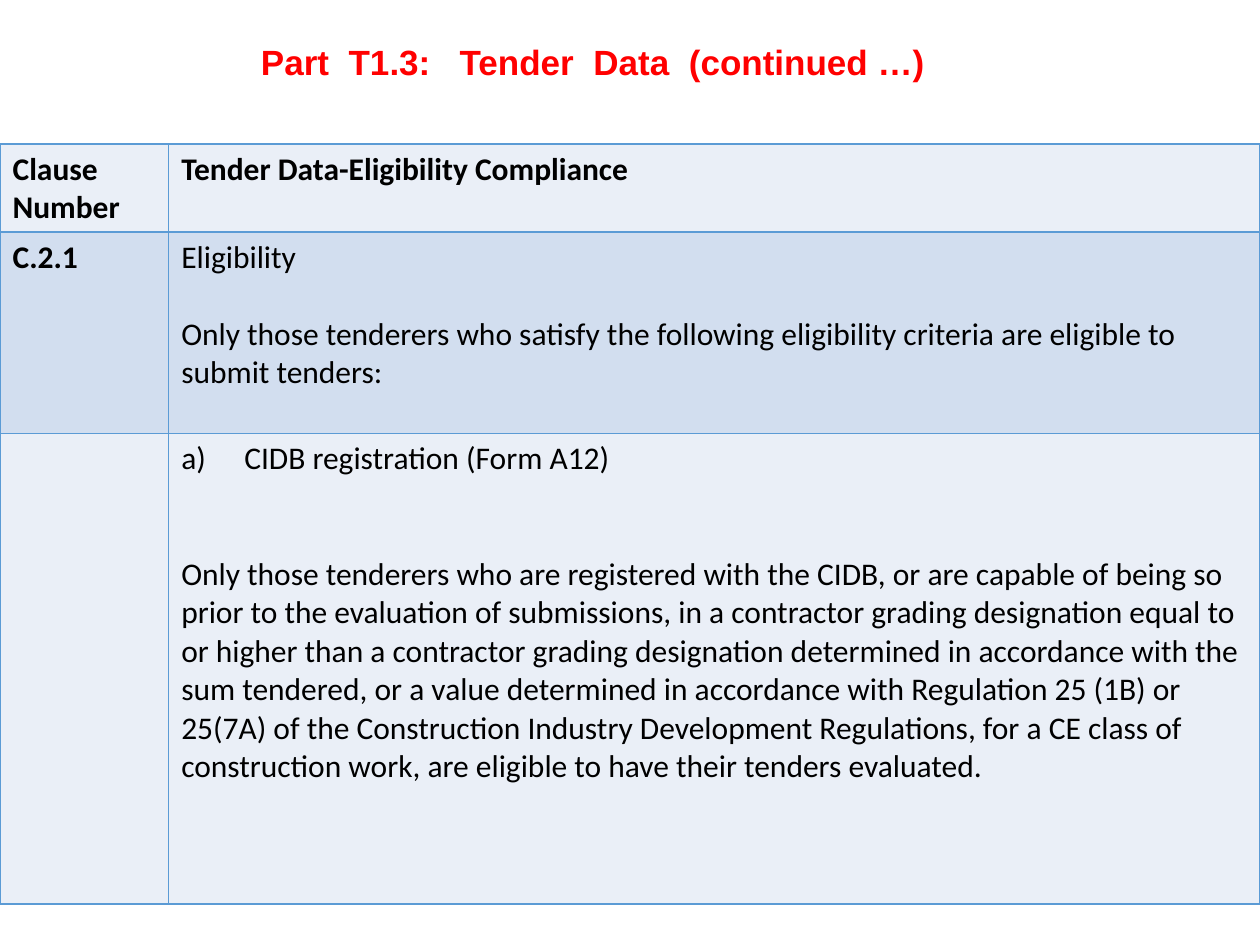
"""Build the tender data slide with its eligibility table."""
from dataclasses import dataclass

import pptx
import pptx.dml.color
import pptx.enum.text
import pptx.oxml
import pptx.oxml.ns
import pptx.util
from pptx.util import Cm, Pt

RED = pptx.dml.color.RGBColor(0xFF, 0x00, 0x00)
BLACK = pptx.dml.color.RGBColor(0x00, 0x00, 0x00)
BORDER = pptx.dml.color.RGBColor(0x5B, 0x9B, 0xD5)
PALE = pptx.dml.color.RGBColor(0xEA, 0xEF, 0xF7)
BAND = pptx.dml.color.RGBColor(0xD2, 0xDE, 0xEF)

TITLE_SIZE = 20
SPACE_WIDTH = 556
LINE_HEIGHT = 22


@dataclass
class Line:
    text: str
    bold: bool = False
    lines_before: int = 0


@dataclass
class Row:
    height: float
    fill: pptx.dml.color.RGBColor
    clause: list[Line]
    data: list[Line]


@dataclass
class Word:
    text: str
    extra_spaces: int = 0


TITLE = [
    Word("Part", 1), Word("T1.3:", 2), Word("Tender", 1),
    Word("Data", 1), Word("(continued …)"),
]
COLUMN_WIDTHS = [3.4, 22]
ROWS = [
    Row(1.78, PALE, [Line("Clause", True), Line("Number", True)],
        [Line("Tender Data-Eligibility Compliance", True)]),
    Row(4.06, BAND, [Line("C.2.1", True)], [
        Line("Eligibility"),
        Line("Only those tenderers who satisfy the following eligibility criteria "
             "are eligible to submit tenders:", lines_before=1),
    ]),
    Row(9.48, PALE, [], [
        Line("a)\tCIDB registration (Form A12)"),
        Line("Only those tenderers who are registered with the CIDB, or are capable "
             "of being so prior to the evaluation of submissions, in a contractor "
             "grading designation equal to or higher than a contractor grading "
             "designation determined in accordance with the sum tendered, or a value "
             "determined in accordance with Regulation 25 (1B) or 25(7A) of the "
             "Construction Industry Development Regulations, for a CE class of "
             "construction work, are eligible to have their tenders evaluated.",
             lines_before=2),
    ]),
]


def add_span(para, text: str, font: str, size: float, color, bold: bool):
    """Add one formatted run to a paragraph."""
    span = para.add_run()
    span.text = text
    span.font.name = font
    span.font.size = Pt(size)
    span.font.bold = bold
    span.font.color.rgb = color
    return span


def write_title(box, words: list[Word]) -> None:
    """Place the title and widen the spaces between its words."""
    box.left, box.top, box.width, box.height = Cm(4.9), Cm(0.69), Cm(14.1), Cm(1.12)
    frame = box.text_frame
    frame.word_wrap = False
    frame.auto_size = pptx.enum.text.MSO_AUTO_SIZE.SHAPE_TO_FIT_TEXT
    frame.vertical_anchor = pptx.enum.text.MSO_ANCHOR.TOP
    para = frame.paragraphs[0]
    para.alignment = pptx.enum.text.PP_ALIGN.CENTER
    for word in words:
        add_span(para, word.text, "Arial", TITLE_SIZE, RED, True)
        if word.extra_spaces:
            gap = add_span(para, " ", "Arial", TITLE_SIZE, RED, True)
            gap.font._element.set("spc", str(word.extra_spaces * SPACE_WIDTH))


def add_borders(cell) -> None:
    """Draw a thin line on all four sides of a cell."""
    properties = cell._tc.get_or_add_tcPr()
    for side in ("lnL", "lnR", "lnT", "lnB"):
        properties.append(pptx.oxml.parse_xml(
            f'<a:{side} {pptx.oxml.ns.nsdecls("a")} w="{Pt(1)}"><a:solidFill>'
            f'<a:srgbClr val="{BORDER}"/></a:solidFill></a:{side}>'))


def write_cell(cell, lines: list[Line], fill) -> None:
    """Fill a cell with its colour, borders and paragraphs."""
    add_borders(cell)
    cell.fill.solid()
    cell.fill.fore_color.rgb = fill
    frame = cell.text_frame
    for index, line in enumerate(lines):
        para = frame.add_paragraph() if index else frame.paragraphs[0]
        if line.lines_before:
            para.space_before = Pt(line.lines_before * LINE_HEIGHT)
        add_span(para, line.text, "Calibri", 18, BLACK, line.bold)


def add_tender_table(page, rows: list[Row]) -> None:
    """Add the full-width table of clauses."""
    table = page.shapes.add_table(
        len(rows), len(COLUMN_WIDTHS), Cm(0), Cm(2.9),
        Cm(sum(COLUMN_WIDTHS)), Cm(sum(row.height for row in rows))).table
    table.first_row = False
    table.horz_banding = False
    for column, width in zip(table.columns, COLUMN_WIDTHS):
        column.width = Cm(width)
    for index, row in enumerate(rows):
        table.rows[index].height = Cm(row.height)
        for column, lines in enumerate((row.clause, row.data)):
            write_cell(table.cell(index, column), lines, row.fill)


def main() -> None:
    """Create the deck and save it."""
    deck = pptx.Presentation()
    deck.slide_width, deck.slide_height = Cm(25.4), Cm(19.05)
    page = deck.slides.add_slide(deck.slide_layouts[5])
    write_title(page.shapes.title, TITLE)
    add_tender_table(page, ROWS)
    deck.save("out.pptx")


if __name__ == "__main__":
    main()
